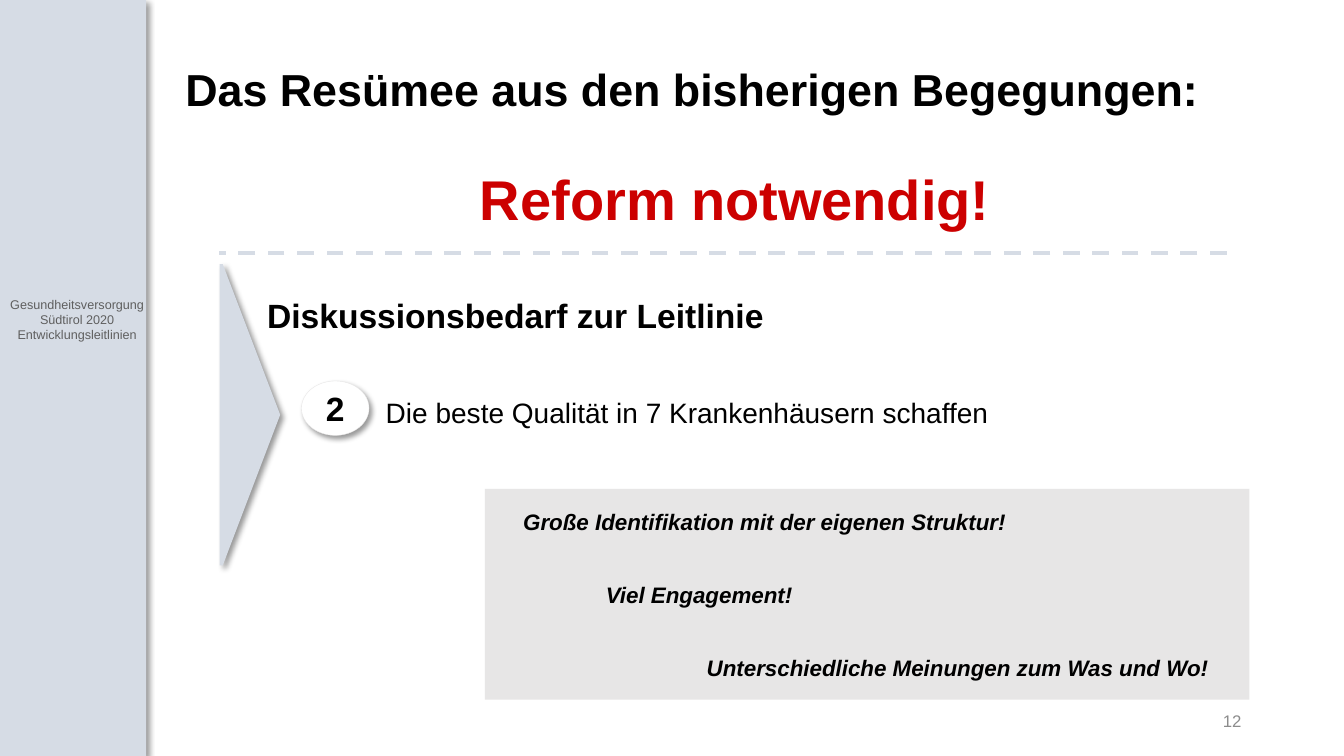
from pptx import Presentation
from pptx.dml.color import RGBColor
from pptx.enum.dml import MSO_LINE_DASH_STYLE as Dash
from pptx.enum.shapes import MSO_CONNECTOR as Connector, MSO_SHAPE as Shape
from pptx.enum.text import MSO_ANCHOR as Anchor, PP_ALIGN as Align
from pptx.oxml import parse_xml
from pptx.oxml.ns import nsdecls
from pptx.util import Inches, Pt

COLORS = {
    "mist": "D6DCE5", "panel": "E7E6E6", "white": "FFFFFF", "black": "000000",
    "red": "CC0000", "caption": "5F5F5F", "number": "8C8C8C",
}
SHADOW = (
    f'<a:effectLst {nsdecls("a")}><a:outerShdw blurRad="50800" dist="38100" '
    'dir="2700000" algn="tl" rotWithShape="0"><a:srgbClr val="000000">'
    '<a:alpha val="40000"/></a:srgbClr></a:outerShdw></a:effectLst>'
)

deck = Presentation()
deck.slide_width, deck.slide_height = Inches(13.333), Inches(7.5)
page = deck.slides.add_slide(deck.slide_layouts[6])


def place(left, top, width, height):
    """Turn percentages of the slide into lengths."""
    across, down = deck.slide_width / 100, deck.slide_height / 100
    return [int(left * across), int(top * down), int(width * across), int(height * down)]


def write(box, lines, size, color="black", bold=True, italic=False, align=Align.LEFT,
          anchor=Anchor.MIDDLE, spacing=1.0, gap=0, indents=(0,), **margins):
    frame = box.text_frame
    settings = {"word_wrap": True, "vertical_anchor": anchor, **margins}
    for name, value in settings.items():
        setattr(frame, name, value)
    for index, line in enumerate(lines):
        para = frame.add_paragraph() if index else frame.paragraphs[0]
        para.alignment, para.line_spacing = align, spacing
        para.space_before = Pt(gap if index else 0)
        indent = indents[index % len(indents)]
        if indent:
            para._p.get_or_add_pPr().set("marL", str(Inches(indent)))
        span = para.add_run()
        span.text = line
        font_format = {"name": "Arial", "size": Pt(size), "bold": bold, "italic": italic}
        for name, value in font_format.items():
            setattr(span.font, name, value)
        span.font.color.rgb = RGBColor.from_string(COLORS[color])


# Sidebar, arrow, number badge and statement panel
shapes = {}
for name, preset, fill, area, shadowed in [
    ("sidebar", Shape.RECTANGLE, "mist", (0, 0, 10.87, 100), True),
    ("arrow", Shape.PENTAGON, "mist", (16.35, 34.93, 4.5, 39.87), True),
    ("badge", Shape.OVAL, "white", (22.43, 50.4, 5.03, 7.2), True),
    ("panel", Shape.RECTANGLE, "panel", (36.08, 64.67, 56.88, 27.87), False),
]:
    shape = page.shapes.add_shape(preset, *place(*area))
    shape.fill.solid()
    shape.fill.fore_color.rgb = RGBColor.from_string(COLORS[fill])
    shape.line.fill.background()
    if shadowed:
        shape._element.spPr.append(parse_xml(SHADOW))
    else:
        shape.shadow.inherit = False
    shapes[name] = shape
shapes["arrow"].adjustments[0] = 0.95

# Hairline that sets the white badge off from the white page
rim = shapes["badge"].line
rim.color.rgb = RGBColor.from_string(COLORS["panel"])
rim.width = Pt(0.25)

# Dashed divider
left, top, width, _ = place(16.28, 33.47, 75, 0)
divider = page.shapes.add_connector(Connector.STRAIGHT, left + width, top, left, top)
divider.line.color.rgb = RGBColor.from_string(COLORS["mist"])
divider.line.width = Pt(3)
divider.line.dash_style = Dash.DASH
divider._element.spPr.append(parse_xml(f'<a:effectLst {nsdecls("a")}/>'))

# Headings, guideline, sidebar caption and slide number
wide_margins = {"margin_left": Inches(0.2), "margin_right": Inches(0.16)}
for area, lines, settings in [
    ((13.05, 5.33, 83.33, 13.73), ["Das Resümee aus den bisherigen Begegungen:"],
     {"size": 32, "spacing": 0.9}),
    ((15.75, 22.4, 77.55, 10.8), ["Reform notwendig!"],
     {"size": 40, "color": "red", "align": Align.CENTER, "spacing": Pt(31), **wide_margins}),
    ((19.13, 36.9, 50.48, 10.27), ["Diskussionsbedarf zur Leitlinie"],
     {"size": 24, "spacing": 0.9}),
    ((19.7, 48.13, 63.23, 12.53), ["Die beste Qualität in 7 Krankenhäusern schaffen"],
     {"size": 20, "bold": False, "spacing": Pt(26), "indents": (1,), **wide_margins}),
    ((0, 38.6, 11.48, 9.33), ["Gesundheitsversorgung Südtirol 2020", "Entwicklungsleitlinien"],
     {"size": 9, "color": "caption", "bold": False, "align": Align.CENTER, "anchor": Anchor.TOP}),
    ((70.62, 92.67, 22.5, 5.33), ["12"],
     {"size": 12, "color": "number", "bold": False, "align": Align.RIGHT}),
]:
    write(page.shapes.add_textbox(*place(*area)), lines, **settings)

# Badge number and stepped statements
write(shapes["badge"], ["2"], 24, align=Align.CENTER)
statements = [
    "Große Identifikation mit der eigenen Struktur!",
    "Viel Engagement!",
    "Unterschiedliche Meinungen zum Was und Wo!",
]
write(shapes["panel"], statements, 16, italic=True, anchor=Anchor.TOP, spacing=Pt(26),
      gap=26, indents=(0.18, 1, 2), margin_top=Inches(0.1), **wide_margins)

deck.save("out.pptx")
